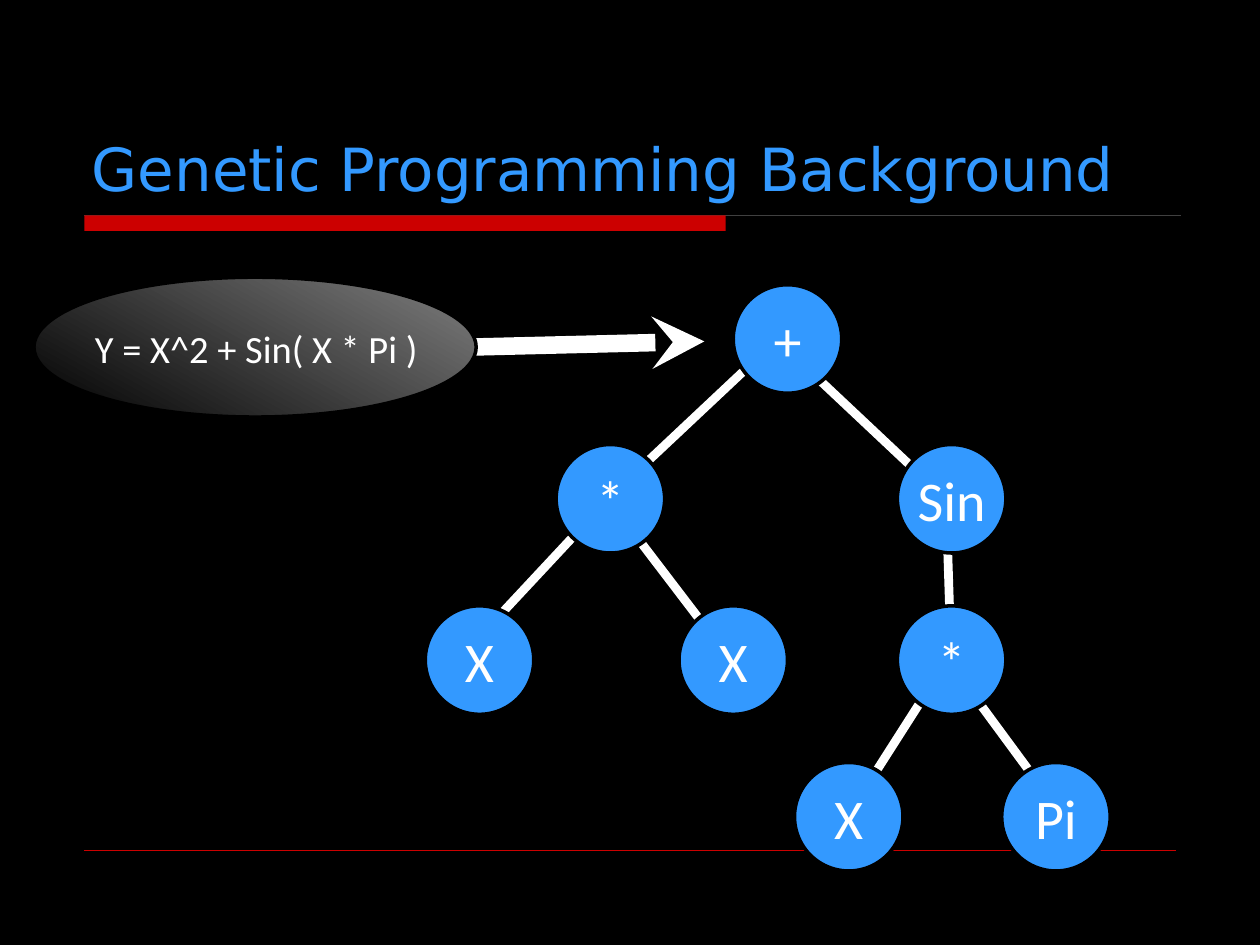
"""Build a slide that shows a formula as a genetic programming tree."""
from lxml import etree
from pptx import Presentation
from pptx.dml.color import RGBColor
from pptx.enum.shapes import MSO_CONNECTOR, MSO_SHAPE
from pptx.enum.text import MSO_ANCHOR, PP_ALIGN
from pptx.oxml.ns import qn
from pptx.util import Pt

LINE = MSO_CONNECTOR.STRAIGHT
OVAL, RECT = MSO_SHAPE.OVAL, MSO_SHAPE.RECTANGLE
MID, LOW = MSO_ANCHOR.MIDDLE, MSO_ANCHOR.BOTTOM
LEFT, CENTER = PP_ALIGN.LEFT, PP_ALIGN.CENTER

HUES = {"black": "000000", "white": "FFFFFF", "blue": "3399FF",
        "red": "CC0000", "gray": "7F7F7F", "rule": "404040"}
TITLE = "Genetic Programming Background"
RULE = "Y = X^2 + Sin( X * Pi )"
SIZE = 62
LEVELS = (193.7, 285, 377.2, 466.7)
NODES = [("+", 450, 0), ("*", 348.8, 1), ("X", 419, 2), ("Sin", 543.8, 1),
         ("*", 543.8, 2), ("X", 274, 2), ("X", 485, 3), ("Pi", 603.4, 3)]
EDGES = [(543.6, 288, 446.4, 196.6), (486, 463.7, 541.4, 377),
         (544.3, 380.9, 608.4, 468), (543.6, 378.7, 540.7, 287.3),
         (275, 363, 345.6, 287.3), (350, 288.7, 417.6, 377.3),
         (366.5, 267, 439.2, 198.7)]
RULES = [((48.2, 123.1, 674.6, 123.1), "rule", 0.75),
         ((48.2, 486, 671.8, 486), "red", 0.25)]
ARROW = (134, 201.6, 402.5, 195.1)
FONTS = {
    "title": {"size": Pt(34), "name": "DejaVu Sans"},
    "node": {"size": Pt(32), "name": "Calibri"},
    "rule": {"size": Pt(22), "name": "Calibri"},
}


def hue(name):
    return RGBColor.from_string(HUES[name])


def draw_line(shapes, ends, color, width):
    line = shapes.add_connector(LINE, *map(Pt, ends))
    line.line.color.rgb = hue(color)
    line.line.width = Pt(width)
    etree.SubElement(line._element.spPr, qn("a:effectLst"))
    return line


def draw_shape(shapes, kind, box, fill=None, edge=None):
    shape = shapes.add_shape(kind, *map(Pt, box))
    shape.shadow.inherit = False
    if fill:
        shape.fill.solid()
        shape.fill.fore_color.rgb = hue(fill)
    if edge:
        shape.line.color.rgb = hue(edge)
        shape.line.width = Pt(2)
    else:
        shape.line.fill.background()
    return shape


def write(shape, text, font, color, align=CENTER, anchor=MID,
          pads=(0, 0, 0, 0), wrap=True):
    frame = shape.text_frame
    sides = ("margin_left", "margin_top", "margin_right", "margin_bottom")
    form = dict(zip(sides, map(Pt, pads)))
    form.update(word_wrap=wrap, vertical_anchor=anchor)
    for key, value in form.items():
        setattr(frame, key, value)
    para = frame.paragraphs[0]
    para.alignment = align
    run = para.add_run()
    run.text = text
    run.font.color.rgb = hue(color)
    for key, value in FONTS[font].items():
        setattr(run.font, key, value)


def draw_rule(shapes):
    group = shapes.add_group_shape().shapes
    oval = draw_shape(group, OVAL, (19.4, 158.4, 252.7, 79.9), edge="black")
    oval.fill.gradient()
    oval.fill.gradient_angle = 61
    for stop, color in zip(oval.fill.gradient_stops, ("black", "gray")):
        stop.color.rgb = hue(color)
    label = group.add_textbox(*map(Pt, (42.5, 183.6, 208, 31)))
    write(label, RULE, "rule", "white", wrap=False)


def main():
    deck = Presentation()
    deck.slide_width, deck.slide_height = Pt(720), Pt(540)
    slide = deck.slides.add_slide(deck.slide_layouts[6])
    slide.background.fill.solid()
    slide.background.fill.fore_color.rgb = hue("black")
    shapes = slide.shapes

    for ends, color, width in RULES:
        draw_line(shapes, ends, color, width)
    draw_shape(shapes, RECT, (48.2, 123.1, 366.5, 8.9), "red")

    arrow = draw_line(shapes, ARROW, "white", 10)
    etree.SubElement(arrow.line._get_or_add_ln(), qn("a:tailEnd"),
                     type="stealth")
    for ends in EDGES:
        draw_line(shapes, ends, "white", 5)

    title = shapes.add_textbox(*map(Pt, (45.4, 23.8, 630, 95.8)))
    write(title, TITLE, "title", "blue", LEFT, LOW, (7.2, 3.6, 2.9, 3.6))

    for text, mid, level in NODES:
        box = (mid - SIZE / 2, LEVELS[level] - SIZE / 2, SIZE, SIZE)
        node = draw_shape(shapes, OVAL, box, "blue", "black")
        write(node, text, "node", "white")
    draw_rule(shapes)
    deck.save("out.pptx")


if __name__ == "__main__":
    main()
